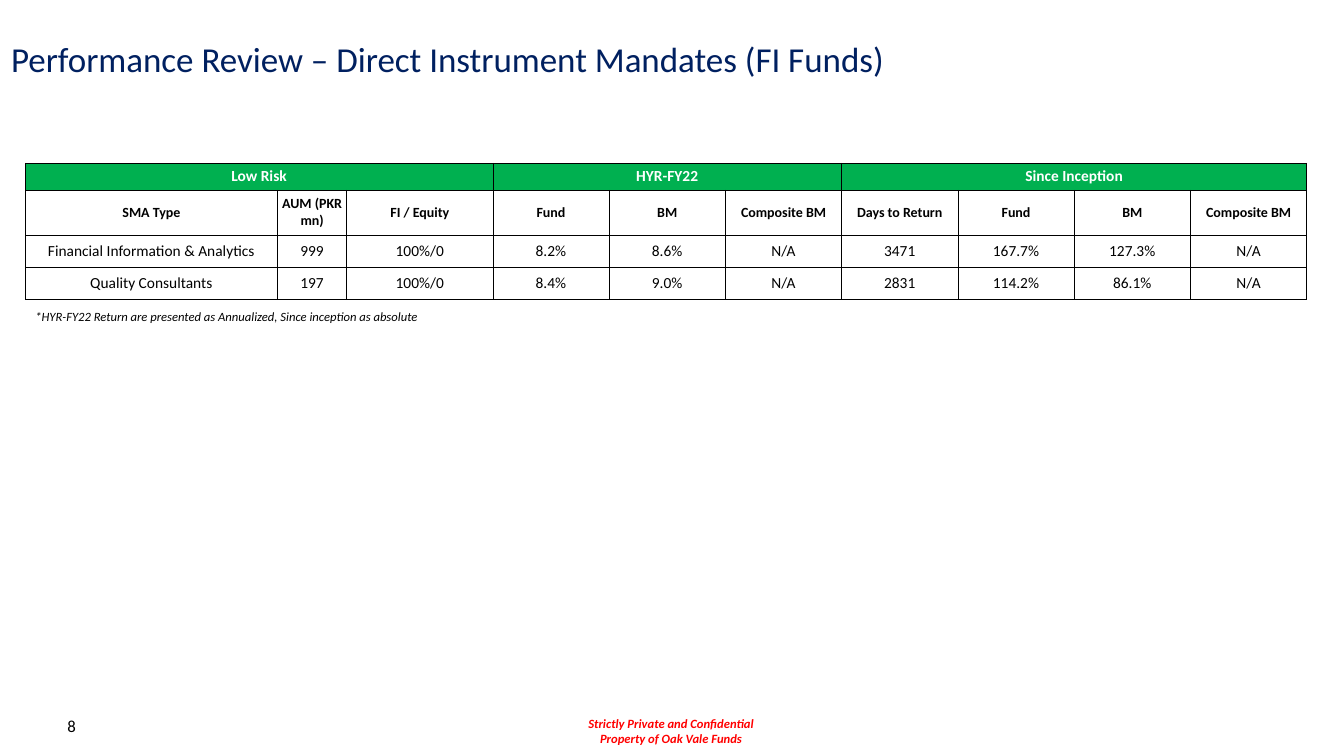
from lxml import etree
from pptx import Presentation
from pptx.dml.color import RGBColor
from pptx.enum.text import MSO_ANCHOR, PP_ALIGN
from pptx.oxml.ns import qn
from pptx.util import Cm, Pt

LEFT, CENTER, RIGHT = PP_ALIGN.LEFT, PP_ALIGN.CENTER, PP_ALIGN.RIGHT
TOP, MIDDLE = MSO_ANCHOR.TOP, MSO_ANCHOR.MIDDLE
BLACK = RGBColor(0x00, 0x00, 0x00)
WHITE = RGBColor(0xFF, 0xFF, 0xFF)
RED = RGBColor(0xFF, 0x00, 0x00)
NAVY = RGBColor(0x00, 0x20, 0x60)
GREEN = RGBColor(0x00, 0xB0, 0x50)

COLUMN_WIDTHS = [6.35, 1.75, 3.68] + [2.93] * 7
ROW_HEIGHTS = [0.68, 1.14, 0.81, 0.81]
ROWS = [
    ["Low Risk", "", "", "HYR-FY22", "", "", "Since Inception", "", "", ""],
    ["SMA Type", "AUM (PKR mn)", "FI / Equity", "Fund", "BM", "Composite BM",
     "Days to Return", "Fund", "BM", "Composite BM"],
    ["Financial Information & Analytics", "999", "100%/0", "8.2%", "8.6%", "N/A",
     "3471", "167.7%", "127.3%", "N/A"],
    ["Quality Consultants", "197", "100%/0", "8.4%", "9.0%", "N/A",
     "2831", "114.2%", "86.1%", "N/A"],
]
# Size, bold and colour of each row's text
ROW_STYLES = [(11, True, WHITE), (10, True, BLACK), (11, False, BLACK), (11, False, BLACK)]
HEADER_GROUPS = [(0, 2), (3, 5), (6, 9)]


def format_text(text_frame, size, color, alignment, bold=False, italic=False):
    for paragraph in text_frame.paragraphs:
        paragraph.alignment = alignment
        for run in paragraph.runs:
            run.font.name = "Calibri"
            run.font.size = Pt(size)
            run.font.bold = bold
            run.font.italic = italic
            run.font.color.rgb = color


def add_borders(cell):
    properties = cell._tc.get_or_add_tcPr()
    for side in ("a:lnL", "a:lnR", "a:lnT", "a:lnB"):
        line = etree.SubElement(properties, qn(side), w=str(Pt(0.5)))
        fill = etree.SubElement(line, qn("a:solidFill"))
        etree.SubElement(fill, qn("a:srgbClr"), val=str(BLACK))


presentation = Presentation()
presentation.slide_width = Cm(33.87)
presentation.slide_height = Cm(19.05)
slide = presentation.slides.add_slide(presentation.slide_layouts[6])

# Text, box, anchor, wrap, size, colour, alignment, bold, italic
TEXT_BOXES = [
    ("Strictly Private and Confidential\nProperty of Oak Vale Funds",
     (14.55, 17.91, 4.72, 1.02), TOP, False, 9, RED, CENTER, True, True),
    ("*HYR-FY22 Return are presented as Annualized, Since inception as absolute",
     (0.64, 7.65, 25.55, 0.64), TOP, True, 9, BLACK, LEFT, False, True),
    ("Performance Review – Direct Instrument Mandates (FI Funds)",
     (0.03, 0.71, 25.4, 1.52), MIDDLE, True, 25, NAVY, LEFT, False, False),
    ("8", (0.61, 17.78, 1.55, 1.02), MIDDLE, True, 12, BLACK, RIGHT, False, False),
]
for text, box, anchor, wrap, size, color, alignment, bold, italic in TEXT_BOXES:
    text_frame = slide.shapes.add_textbox(*map(Cm, box)).text_frame
    text_frame.text = text
    text_frame.word_wrap = wrap
    text_frame.vertical_anchor = anchor
    format_text(text_frame, size, color, alignment, bold, italic)

table = slide.shapes.add_table(
    len(ROWS), len(COLUMN_WIDTHS), Cm(0.64), Cm(4.11),
    Cm(sum(COLUMN_WIDTHS)), Cm(sum(ROW_HEIGHTS))).table
table.first_row = False
table.horz_banding = False
for column, width in zip(table.columns, COLUMN_WIDTHS):
    column.width = Cm(width)

for row, height, values, (size, bold, color) in zip(table.rows, ROW_HEIGHTS, ROWS, ROW_STYLES):
    row.height = Cm(height)
    for cell, value in zip(row.cells, values):
        cell.text = value
        cell.vertical_anchor = MIDDLE
        cell.margin_left = cell.margin_right = cell.margin_top = cell.margin_bottom = 0
        format_text(cell.text_frame, size, color, CENTER, bold)
        add_borders(cell)
        cell.fill.background()

for first, last in HEADER_GROUPS:
    for column_index in range(first, last + 1):
        cell = table.cell(0, column_index)
        cell.fill.solid()
        cell.fill.fore_color.rgb = GREEN
    table.cell(0, first).merge(table.cell(0, last))

presentation.save("out.pptx")
